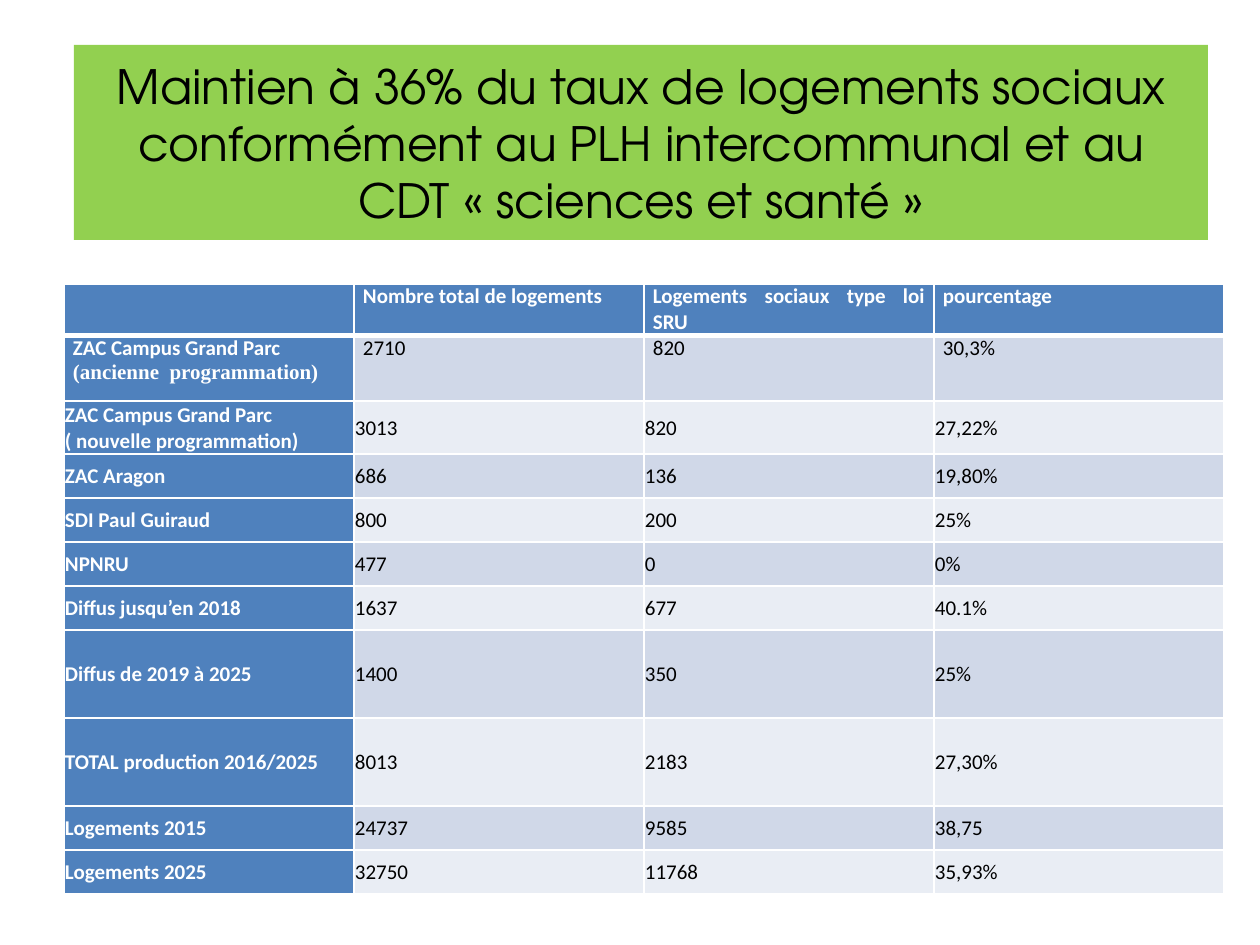
from dataclasses import dataclass

import lxml.etree
import pptx
import pptx.dml.color
import pptx.enum.shapes
import pptx.enum.text
import pptx.oxml.ns
import pptx.slide
import pptx.table
import pptx.text.text
import pptx.util

EMU_PER_PX = 914400 / 126
ALIGN = pptx.enum.text.PP_ALIGN
ANCHOR = pptx.enum.text.MSO_ANCHOR

WHITE, BLACK = "FFFFFF", "000000"
HEADER_BLUE = "4F81BD"
BANDS = ("D0D8E8", "E9EDF4")
TITLE = (
    "Maintien à 36% du taux de logements sociaux conformément "
    "au PLH intercommunal et au CDT « sciences et santé »"
)


@dataclass(frozen=True)
class HousingRow:
    height: int
    label: str
    total: str
    social: str
    percentage: str


ROWS = [
    HousingRow(51, "", "Nombre total de logements", "Logements sociaux type loi SRU", "pourcentage"),
    HousingRow(66, "ZAC Campus Grand Parc\n(ancienne  programmation)", "2710", "820", "30,3%"),
    HousingRow(53, "ZAC Campus Grand Parc\n( nouvelle programmation)", "3013", "820", "27,22%"),
    HousingRow(44, "ZAC Aragon", "686", "136", "19,80%"),
    HousingRow(44, "SDI Paul Guiraud", "800", "200", "25%"),
    HousingRow(44, "NPNRU", "477", "0", "0%"),
    HousingRow(44, "Diffus jusqu’en 2018", "1637", "677", "40.1%"),
    HousingRow(88, "Diffus de 2019 à 2025", "1400", "350", "25%"),
    HousingRow(88, "TOTAL production 2016/2025", "8013", "2183", "27,30%"),
    HousingRow(44, "Logements 2015", "24737", "9585", "38,75"),
    HousingRow(44, "Logements 2025", "32750", "11768", "35,93%"),
]


def px(length: int) -> int:
    return round(length * EMU_PER_PX)


def color(value: str) -> pptx.dml.color.RGBColor:
    return pptx.dml.color.RGBColor.from_string(value)


def add_run(paragraph: pptx.text.text._Paragraph, text: str, size: int,
            font_name: str, text_color: str, bold: bool = False) -> None:
    run = paragraph.add_run()
    run.text = text
    run.font.size = pptx.util.Pt(size)
    run.font.name = font_name
    run.font.bold = bold
    run.font.color.rgb = color(text_color)


def draw_title(slide: pptx.slide.Slide) -> None:
    shape = slide.shapes.add_shape(
        pptx.enum.shapes.MSO_SHAPE.RECTANGLE, px(74), px(45), px(1134), px(195))
    shape.shadow.inherit = False
    shape.fill.solid()
    shape.fill.fore_color.rgb = color("92D050")
    shape.line.fill.background()
    frame = shape.text_frame
    frame.word_wrap = True
    frame.vertical_anchor = ANCHOR.MIDDLE
    paragraph = frame.paragraphs[0]
    paragraph.alignment = ALIGN.CENTER
    add_run(paragraph, TITLE, 27, "TeX Gyre Adventor", BLACK)


def set_border(cell: pptx.table._Cell, side: str, width: int) -> None:
    qn = pptx.oxml.ns.qn
    properties = cell._tc.get_or_add_tcPr()
    line = lxml.etree.SubElement(properties, qn(f"a:ln{side}"), w=str(pptx.util.Pt(width)))
    fill = lxml.etree.SubElement(line, qn("a:solidFill"))
    lxml.etree.SubElement(fill, qn("a:srgbClr"), val=WHITE)


def fill_cell(cell: pptx.table._Cell, text: str, row: int, column: int) -> None:
    heading = row == 0 or column == 0
    top_aligned = row < 2
    side_margin = px(9 if top_aligned else 1)
    cell.margin_left = cell.margin_right = side_margin
    cell.margin_top = 0 if top_aligned else px(1)
    cell.margin_bottom = 0
    cell.vertical_anchor = ANCHOR.TOP if top_aligned else ANCHOR.MIDDLE
    thick_side = {0: "B", 1: "T"}.get(row)
    for side in "LRTB":
        set_border(cell, side, 3 if side == thick_side else 1)
    cell.fill.solid()
    cell.fill.fore_color.rgb = color(HEADER_BLUE if heading else BANDS[(row - 1) % 2])
    if not text:
        return
    frame = cell.text_frame
    for index, line in enumerate(text.split("\n")):
        paragraph = frame.add_paragraph() if index else frame.paragraphs[0]
        paragraph.alignment = ALIGN.JUSTIFY
        font_name = "Times New Roman" if row == 1 and index else "Calibri"
        add_run(paragraph, line, 12, font_name, WHITE if heading else BLACK, heading)


def draw_housing_table(slide: pptx.slide.Slide) -> None:
    height = sum(row.height for row in ROWS)
    table = slide.shapes.add_table(
        len(ROWS), 4, px(64), px(284), px(1160), px(height)).table
    for column in table.columns:
        column.width = px(290)
    for row_index, row in enumerate(ROWS):
        table.rows[row_index].height = px(row.height)
        texts = (row.label, row.total, row.social, row.percentage)
        for column_index, text in enumerate(texts):
            fill_cell(table.cell(row_index, column_index), text, row_index, column_index)


def main() -> None:
    presentation = pptx.Presentation()
    presentation.slide_width = px(1260)
    presentation.slide_height = px(945)
    slide = presentation.slides.add_slide(presentation.slide_layouts[6])
    draw_title(slide)
    draw_housing_table(slide)
    presentation.save("out.pptx")


if __name__ == "__main__":
    main()
